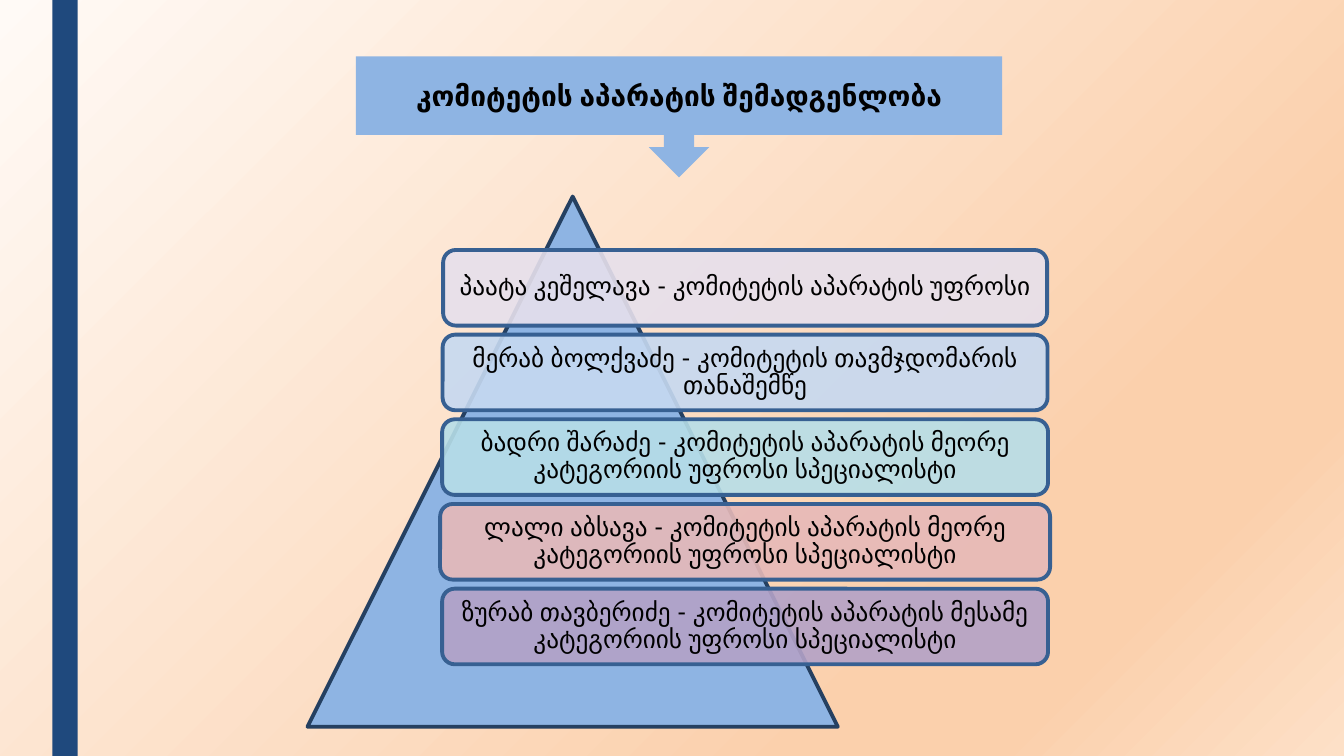
from copy import deepcopy

from lxml import etree
from pptx import Presentation
from pptx.dml.color import RGBColor
from pptx.enum.shapes import MSO_SHAPE
from pptx.enum.text import MSO_ANCHOR, MSO_AUTO_SIZE, PP_ALIGN
from pptx.oxml.ns import qn
from pptx.util import Inches, Pt

RECTANGLE = MSO_SHAPE.RECTANGLE
TRIANGLE = MSO_SHAPE.ISOSCELES_TRIANGLE
ROUNDED = MSO_SHAPE.ROUNDED_RECTANGLE
CALLOUT = MSO_SHAPE.DOWN_ARROW_CALLOUT
MIDDLE = MSO_ANCHOR.MIDDLE
NO_AUTOFIT = MSO_AUTO_SIZE.NONE
CENTER = PP_ALIGN.CENTER

FONT = "Lato"
COLORS = {
    "stripe": "1F497D",
    "blue": "8EB4E3",
    "pyramid line": "254061",
    "card line": "376092",
    "text": "000000",
}
BACKGROUND_STOPS = [(0, "FFFAF6"), (0.74, "FBD0AC"), (0.83, "FBD0AC"), (1, "FDE0C7")]
TITLE = "კომიტეტის აპარატის შემადგენლობა"
# text, fill, width in inches
STAFF = [
    ("პაატა კეშელავა - კომიტეტის აპარატის უფროსი", "E6E0EC", 5.99),
    ("მერაბ ბოლქვაძე - კომიტეტის თავმჯდომარის თანაშემწე", "C6D9F1", 6.0),
    ("ბადრი შარაძე - კომიტეტის აპარატის მეორე კატეგორიის უფროსი სპეციალისტი", "B7DEE8", 6.01),
    ("ლალი აბსავა - კომიტეტის აპარატის მეორე კატეგორიის უფროსი სპეციალისტი", "E6B9B8", 6.05),
    ("ზურაბ თავბერიძე - კომიტეტის აპარატის მესამე კატეგორიის უფროსი სპეციალისტი", "B3A2C7", 6.01),
]
CARD_CENTER, CARD_TOP, CARD_HEIGHT, CARD_PITCH = 7.39, 2.48, 0.75, 0.84
CARD_OPACITY = 90
LINE_WIDTH = 2.75
CALLOUT_LEFT, CALLOUT_TOP, CALLOUT_WIDTH, CALLOUT_HEIGHT = 3.53, 0.56, 6.41, 1.2
CALLOUT_BOX_SHARE = 0.65


def paint_background(slide):
    fill = slide.background.fill
    fill.gradient()
    fill.gradient_angle = 315
    stop_list = slide.element.find(".//" + qn("a:gsLst"))
    while len(stop_list) < len(BACKGROUND_STOPS):
        stop_list.append(deepcopy(stop_list[0]))
    for stop, (position, color) in zip(fill.gradient_stops, BACKGROUND_STOPS):
        stop.position = position
        stop.color.rgb = RGBColor.from_string(color)


def add_figure(slide, kind, left, top, width, height, fill, line=None):
    shape = slide.shapes.add_shape(
        kind, Inches(left), Inches(top), Inches(width), Inches(height))
    shape.shadow.inherit = False
    shape.fill.solid()
    shape.fill.fore_color.rgb = RGBColor.from_string(fill)
    if line:
        shape.line.color.rgb = RGBColor.from_string(line)
        shape.line.width = Pt(LINE_WIDTH)
    else:
        shape.line.fill.background()
    return shape


def set_opacity(shape, percent):
    color = shape.element.spPr.find(qn("a:solidFill"))[0]
    etree.SubElement(color, qn("a:alpha"), val=str(percent * 1000))


def write(shape, text, size, margin, bold=False, spacing=1.0):
    frame = shape.text_frame
    frame.word_wrap = True
    frame.auto_size = NO_AUTOFIT
    frame.vertical_anchor = MIDDLE
    frame.margin_left = frame.margin_right = Inches(margin)
    frame.margin_top = frame.margin_bottom = Inches(0.07)
    para = frame.paragraphs[0]
    para.alignment = CENTER
    para.line_spacing = spacing
    span = para.add_run()
    span.text = text
    span.font.name = FONT
    span.font.size = Pt(size)
    span.font.bold = bold
    span.font.color.rgb = RGBColor.from_string(COLORS["text"])


def add_title(slide):
    add_figure(slide, CALLOUT, CALLOUT_LEFT, CALLOUT_TOP, CALLOUT_WIDTH,
               CALLOUT_HEIGHT, COLORS["blue"])
    title = slide.shapes.title
    title.left, title.top = Inches(CALLOUT_LEFT), Inches(CALLOUT_TOP)
    title.width = Inches(CALLOUT_WIDTH)
    title.height = Inches(CALLOUT_HEIGHT * CALLOUT_BOX_SHARE)
    write(title, TITLE, 20, 0.1, bold=True)
    slide.shapes.element.append(title.element)  # bring in front of the callout


def add_staff_cards(slide):
    for row, (text, fill, width) in enumerate(STAFF):
        card = add_figure(slide, ROUNDED, CARD_CENTER - width / 2,
                          CARD_TOP + row * CARD_PITCH, width, CARD_HEIGHT,
                          fill, COLORS["card line"])
        set_opacity(card, CARD_OPACITY)
        write(card, text, 18, 0.07, spacing=0.9)


def main():
    deck = Presentation()
    deck.slide_width, deck.slide_height = Inches(13.33), Inches(7.5)
    slide = deck.slides.add_slide(deck.slide_layouts[5])
    paint_background(slide)
    add_figure(slide, RECTANGLE, 0.52, 0, 0.25, 7.5, COLORS["stripe"])
    add_figure(slide, TRIANGLE, 3.05, 1.95, 5.26, 5.26,
               COLORS["blue"], COLORS["pyramid line"])
    add_staff_cards(slide)
    add_title(slide)
    deck.save("out.pptx")


if __name__ == "__main__":
    main()
